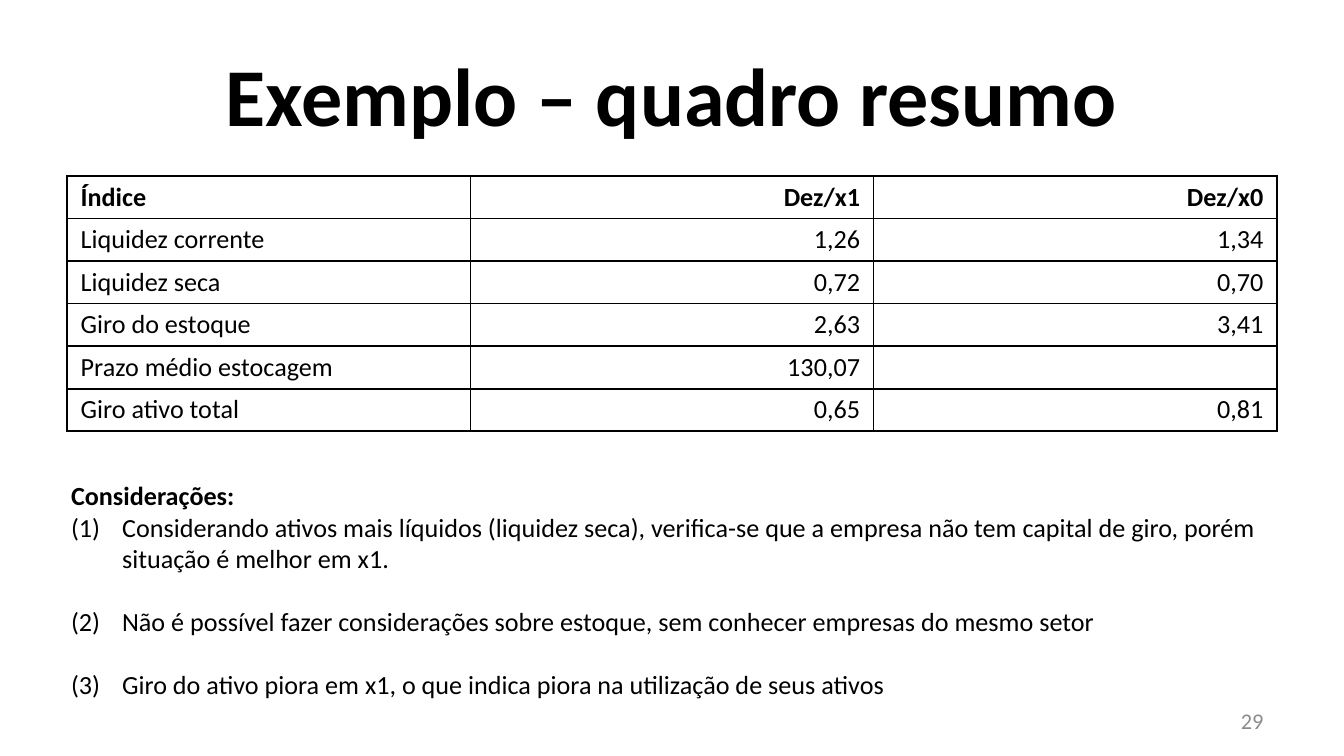
from dataclasses import dataclass

from lxml import etree
from pptx import Presentation
from pptx.dml.color import RGBColor
from pptx.enum.text import MSO_ANCHOR, PP_ALIGN
from pptx.oxml.ns import qn
from pptx.util import Inches, Pt

LEFT, CENTER, RIGHT = PP_ALIGN.LEFT, PP_ALIGN.CENTER, PP_ALIGN.RIGHT
MIDDLE = MSO_ANCHOR.MIDDLE
TITLE_ONLY = 5


@dataclass(frozen=True)
class Theme:
    font: str = "Calibri"
    ink: RGBColor = RGBColor(0x00, 0x00, 0x00)
    muted: RGBColor = RGBColor(0x8C, 0x8C, 0x8C)
    title: Pt = Pt(44)
    body: Pt = Pt(14)
    small: Pt = Pt(12)
    item_gap: Pt = Pt(17)
    border: Pt = Pt(1)


THEME = Theme()


def write(para, text, size=THEME.body, color=THEME.ink, bold=False, align=LEFT):
    para.text = text
    para.alignment = align
    para.font.name = THEME.font
    para.font.size = size
    para.font.bold = bold
    para.font.color.rgb = color


def add_borders(cell):
    properties = cell._tc.get_or_add_tcPr()
    for position, side in enumerate(("a:lnL", "a:lnR", "a:lnT", "a:lnB")):
        line = etree.Element(qn(side), w=str(THEME.border))
        fill = etree.SubElement(line, qn("a:solidFill"))
        etree.SubElement(fill, qn("a:srgbClr"), val=str(THEME.ink))
        properties.insert(position, line)


# Widescreen page, 16:9
deck = Presentation()
deck.slide_width = Inches(10)
deck.slide_height = Inches(10 * 9 / 16)
page = deck.slides.add_slide(deck.slide_layouts[TITLE_ONLY])

# Title
title = page.shapes.title
title.left, title.top = Inches(0.5), Inches(0.23)
title.width, title.height = Inches(9), Inches(0.94)
title.text_frame.vertical_anchor = MIDDLE
write(title.text_frame.paragraphs[0], "Exemplo – quadro resumo",
      THEME.title, bold=True, align=CENTER)

# Ratio table
ratios = [
    ("Índice", "Dez/x1", "Dez/x0"),
    ("Liquidez corrente", "1,26", "1,34"),
    ("Liquidez seca", "0,72", "0,70"),
    ("Giro do estoque", "2,63", "3,41"),
    ("Prazo médio estocagem", "130,07", ""),
    ("Giro ativo total", "0,65", "0,81"),
]
table = page.shapes.add_table(len(ratios), 3, Inches(0.5), Inches(1.31),
                              Inches(9), Inches(0.3) * len(ratios)).table
for row, values in enumerate(ratios):
    for column, value in enumerate(values):
        cell = table.cell(row, column)
        cell.margin_left = cell.margin_right = Inches(0.1)
        cell.margin_top = cell.margin_bottom = Inches(0.04)
        cell.fill.background()
        add_borders(cell)
        para = cell.text_frame.paragraphs[0]
        write(para, value, bold=row == 0, align=RIGHT if column else LEFT)
        if not value:
            # An empty cell takes its line height from the end mark
            etree.SubElement(para._p, qn("a:endParaRPr"),
                             sz=str(int(THEME.body.pt * 100)))

# Slide number
number = page.shapes.add_textbox(Inches(7.17), Inches(5.21), Inches(2.33), Inches(0.3))
number.text_frame.word_wrap = True
number.text_frame.vertical_anchor = MIDDLE
write(number.text_frame.paragraphs[0], "29", THEME.small, THEME.muted, align=RIGHT)

# Numbered remarks
remarks = [
    "Considerando ativos mais líquidos (liquidez seca), verifica-se que a empresa "
    "não tem capital de giro, porém situação é melhor em x1.",
    "Não é possível fazer considerações sobre estoque, sem conhecer empresas "
    "do mesmo setor",
    "Giro do ativo piora em x1, o que indica piora na utilização de seus ativos",
]
box = page.shapes.add_textbox(Inches(0.43), Inches(3.52), Inches(9.21), Inches(1.75))
frame = box.text_frame
frame.word_wrap = True
write(frame.paragraphs[0], "Considerações:", bold=True)
for index, remark in enumerate(remarks):
    para = frame.add_paragraph()
    write(para, remark)
    if index:
        para.space_before = THEME.item_gap
    properties = para._p.get_or_add_pPr()
    properties.set("marL", str(Inches(0.38)))
    properties.set("indent", str(-Inches(0.38)))
    numbering = etree.Element(qn("a:buAutoNum"), type="arabicParenBoth")
    properties.find(qn("a:defRPr")).addprevious(numbering)

deck.save("out.pptx")
